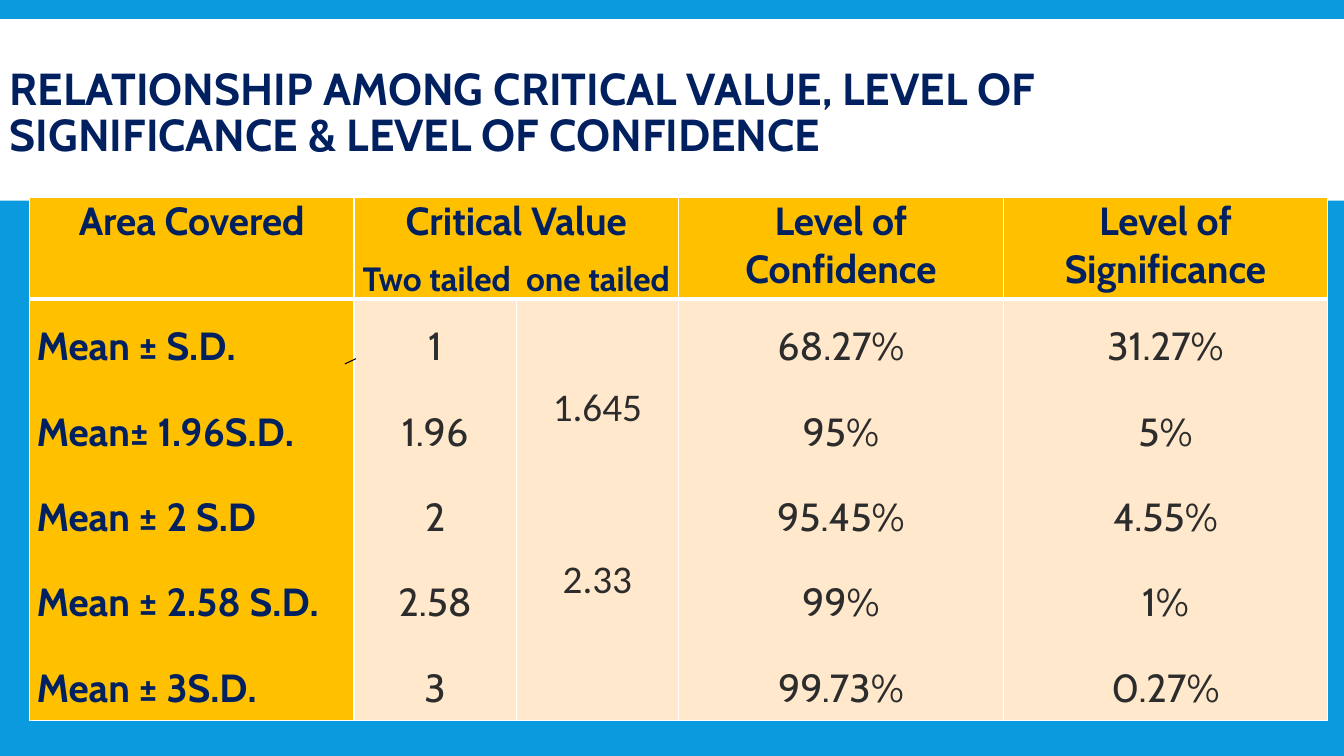
import pptx
import pptx.util
import pptx.dml.color
import pptx.enum.shapes
import pptx.enum.text
import pptx.oxml
from dataclasses import dataclass
from pptx.util import Cm, Pt


@dataclass
class Theme:
    blue: str = "099BDD"
    white: str = "FFFFFF"
    navy: str = "002060"
    gold: str = "FFC000"
    cream: str = "FFE8CC"
    grey: str = "2C2C2C"
    black: str = "000000"
    font: str = "Cabin"
    number_font: str = "Calibri"
    title_size: int = 32
    table_size: int = 28
    small_size: int = 24


theme = Theme()
ALIGN = pptx.enum.text.PP_ALIGN
rgb = pptx.dml.color.RGBColor.from_string


def style(para, size, color, bold, font=theme.font):
    for span in para.runs:
        span.font.name = font
        span.font.size = Pt(size)
        span.font.bold = bold
        span.font.color.rgb = rgb(color)


def paint(cell, color, top, bottom):
    properties = cell._tc.get_or_add_tcPr()
    for side, width in (("lnL", 1), ("lnR", 1), ("lnT", top), ("lnB", bottom)):
        properties.append(pptx.oxml.parse_xml(
            f'<a:{side} xmlns:a="http://schemas.openxmlformats.org/drawingml/2006/main" w="{Pt(width)}">'
            f'<a:solidFill><a:srgbClr val="{theme.white}"/></a:solidFill></a:{side}>'))
    cell.fill.solid()
    cell.fill.fore_color.rgb = rgb(color)
    cell.margin_left = cell.margin_right = Cm(0.18)
    cell.margin_top = cell.margin_bottom = 0


deck = pptx.Presentation()
deck.slide_width, deck.slide_height = Cm(33.87), Cm(19.05)
page = deck.slides.add_slide(deck.slide_layouts[6])
page.background.fill.solid()
page.background.fill.fore_color.rgb = rgb(theme.blue)

band = page.shapes.add_shape(pptx.enum.shapes.MSO_SHAPE.RECTANGLE, 0, Cm(0.48), deck.slide_width, Cm(4.58))
band.shadow.inherit = False
band.fill.solid()
band.fill.fore_color.rgb = rgb(theme.white)
band.line.fill.background()

title = page.shapes.add_textbox(0, Cm(0.79), Cm(32.5), Cm(4.19)).text_frame
title.word_wrap = True
title.vertical_anchor = pptx.enum.text.MSO_ANCHOR.MIDDLE
title.text = "RELATIONSHIP AMONG CRITICAL VALUE, LEVEL OF SIGNIFICANCE & LEVEL OF CONFIDENCE"
title.paragraphs[0].line_spacing = 0.85
style(title.paragraphs[0], theme.title_size, theme.navy, True)

column_widths = [8.18, 4.09, 4.09, 8.18, 8.18]
row_heights = [2.5, 10.61]
table = page.shapes.add_table(2, 5, Cm(0.74), Cm(4.98), Cm(sum(column_widths)), Cm(sum(row_heights))).table
table.first_row = table.horz_banding = False
for column, width in zip(table.columns, column_widths):
    column.width = Cm(width)
for row, height in zip(table.rows, row_heights):
    row.height = Cm(height)

headings = ["Area Covered", "Critical Value", "", "Level of Confidence", "Level of Significance"]
values = [
    ["Mean ± S.D.", "Mean± 1.96S.D.", "Mean ± 2 S.D", "Mean ± 2.58 S.D.", "Mean ± 3S.D."],
    ["1", "1.96", "2", "2.58", "3"],
    ["1.645", "2.33"],
    ["68.27%", "95%", "95.45%", "99%", "99.73%"],
    ["31.27%", "5%", "4.55%", "1%", "0.27%"],
]

table.cell(0, 1).merge(table.cell(0, 2))
for index, (heading, lines) in enumerate(zip(headings, values)):
    header, body = table.cell(0, index), table.cell(1, index)
    is_label = index == 0
    paint(header, theme.gold, 1, 3)
    paint(body, theme.gold if is_label else theme.cream, 3, 1)
    if heading:
        header.text_frame.text = heading
        para = header.text_frame.paragraphs[0]
        para.alignment = ALIGN.CENTER
        para.space_after = Pt(10)
        style(para, theme.table_size, theme.navy, True)
    body.text_frame.text = "\n".join(lines)
    for para in body.text_frame.paragraphs:
        para.alignment = ALIGN.JUSTIFY if is_label else ALIGN.CENTER
        para.line_spacing = 1.5
        para.space_after = Pt(10)
        style(para, theme.table_size, theme.navy if is_label else theme.grey, is_label,
              theme.number_font if index == 2 else theme.font)

one_tailed = table.cell(1, 2)
one_tailed.margin_top = Pt(44)
one_tailed.text_frame.paragraphs[1].space_before = Pt(61)

tails = table.cell(0, 1).text_frame.add_paragraph()
tails.alignment = ALIGN.CENTER
tails.space_after = Pt(10)
for words in ("Two tailed", " ", "one tailed"):
    tails.add_run().text = words
style(tails, theme.small_size, theme.navy, True)
tails.runs[1].font._element.set("spc", "550")

tick = page.shapes.add_connector(pptx.enum.shapes.MSO_CONNECTOR.STRAIGHT, Cm(8.69), Cm(9.17), Cm(8.97), Cm(9.04))
tick.line.color.rgb = rgb(theme.black)
tick.line.width = Pt(0.75)
tick._element.spPr.append(pptx.oxml.parse_xml(
    '<a:effectLst xmlns:a="http://schemas.openxmlformats.org/drawingml/2006/main"/>'))

deck.save("out.pptx")
